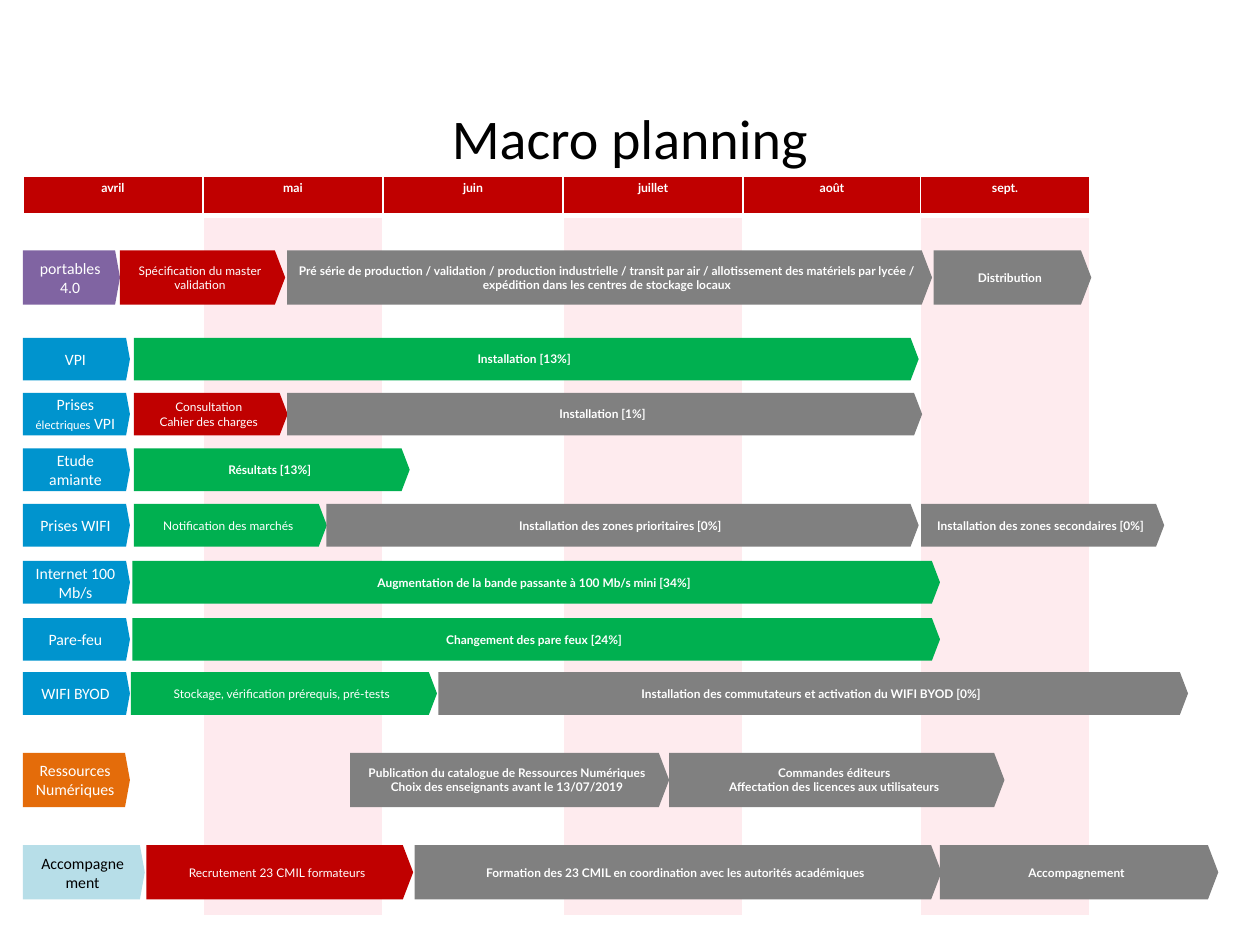
import pptx
import pptx.dml.color
import pptx.enum.shapes
import pptx.enum.text
import pptx.oxml
import pptx.oxml.ns
import pptx.util

Cm = pptx.util.Cm
Pt = pptx.util.Pt
RGB = pptx.dml.color.RGBColor
ALIGN = pptx.enum.text.PP_ALIGN
ANCHOR = pptx.enum.text.MSO_ANCHOR
PLATE = pptx.enum.shapes.MSO_SHAPE.PENTAGON

BLACK = RGB(0x00, 0x00, 0x00)
WHITE = RGB(0xFF, 0xFF, 0xFF)
RED = RGB(0xC0, 0x00, 0x00)
GREEN = RGB(0x00, 0xB0, 0x50)
GREY = RGB(0x80, 0x80, 0x80)
BLUE = RGB(0x00, 0x94, 0xCE)
VIOLET = RGB(0x80, 0x64, 0xA2)
ORANGE = RGB(0xE4, 0x6C, 0x0A)
PALE = RGB(0xB7, 0xDE, 0xE8)
ROSE = RGB(0xFE, 0xE2, 0xE7)
BLUSH = RGB(0xFE, 0xEB, 0xEE)

PREP = (RED, False)
START = (GREEN, False)
RUN = (GREEN, True)
NEXT = (GREY, True)

LEFT = 0.46
LOW = 0.86
HIGH = 1.09

MONTHS = [
    ("avril", 3.63, WHITE, 100),
    ("mai", 3.63, ROSE, 70),
    ("juin", 3.63, WHITE, 100),
    ("juillet", 3.63, BLUSH, 100),
    ("août", 3.58, WHITE, 70),
    ("sept.", 3.4, BLUSH, 100),
]

TRACKS = [
    (5.05, HIGH, "portables 4.0", 1.96, VIOLET, [
        (1.96, 3.33, "Spécification du master\nvalidation", PREP),
        (5.33, 13, "Pré série de production / validation / production industrielle / "
         "transit par air / allotissement des matériels par lycée / "
         "expédition dans les centres de stockage locaux", NEXT),
        (18.36, 3.18, "Distribution", NEXT)]),
    (6.81, LOW, "VPI", 2.16, BLUE, [
        (2.24, 15.82, "Installation [13%]", RUN)]),
    (7.92, LOW, "Prises |électriques| VPI", 2.16, BLUE, [
        (2.24, 3.1, "Consultation\nCahier des charges", PREP),
        (5.33, 12.8, "Installation [1%]", NEXT)]),
    (9.04, LOW, "Etude amiante", 2.16, BLUE, [
        (2.24, 5.56, "Résultats [13%]", RUN)]),
    (10.16, LOW, "Prises WIFI", 2.16, BLUE, [
        (2.24, 3.89, "Notification des marchés", START),
        (6.12, 11.94, "Installation des zones prioritaires [0%]", NEXT),
        (18.11, 4.9, "Installation des zones secondaires [0%]", NEXT)]),
    (11.31, LOW, "Internet 100 Mb/s", 2.16, BLUE, [
        (2.21, 16.28, "Augmentation de la bande passante à 100 Mb/s mini [34%]", RUN)]),
    (12.46, LOW, "Pare-feu", 2.16, BLUE, [
        (2.21, 16.28, "Changement des pare feux [24%]", RUN)]),
    (13.55, LOW, "WIFI BYOD", 2.16, BLUE, [
        (2.18, 6.17, "Stockage, vérification prérequis, pré-tests", START),
        (8.38, 15.11, "Installation des commutateurs et activation du WIFI BYOD [0%]", NEXT)]),
    (15.18, HIGH, "Ressources Numériques", 2.16, ORANGE, [
        (6.6, 6.43, "Publication du catalogue de Ressources Numériques\n"
         "Choix des enseignants avant le 13/07/2019", NEXT),
        (13.03, 6.76, "Commandes éditeurs\nAffectation des licences aux utilisateurs", NEXT)]),
    (17.04, HIGH, "Accompagnement", 2.46, PALE, [
        (2.49, 5.38, "Recrutement 23 CMIL formateurs", PREP),
        (7.9, 10.62, "Formation des 23 CMIL en coordination avec les autorités académiques", NEXT),
        (18.49, 5.61, "Accompagnement", NEXT)]),
]


def style(run, size, face, tone, bold=False):
    run.font.size = Pt(size)
    run.font.name = face
    run.font.color.rgb = tone
    run.font.bold = bold


def head(slide, left, top, width, height):
    title = slide.shapes.title
    title.left, title.top, title.width, title.height = map(Cm, (left, top, width, height))
    frame = title.text_frame
    frame.text = "Macro planning"
    frame.vertical_anchor = ANCHOR.TOP
    line = frame.paragraphs[0]
    line.alignment = ALIGN.CENTER
    style(line.runs[0], 32, "Calibri", BLACK)


def paint(cell, tone, edges, alpha=100):
    props = cell._tc.get_or_add_tcPr()
    for side, width in zip("LRTB", edges):
        props.append(pptx.oxml.parse_xml(
            f'<a:ln{side} {pptx.oxml.ns.nsdecls("a")} w="{Pt(width)}">'
            f'<a:solidFill><a:srgbClr val="{WHITE}"/></a:solidFill></a:ln{side}>'))
    cell.fill.solid()
    cell.fill.fore_color.rgb = tone
    if alpha < 100:
        color = props.find("a:solidFill/a:srgbClr", pptx.oxml.ns._nsmap)
        color.append(pptx.oxml.parse_xml(
            f'<a:alpha {pptx.oxml.ns.nsdecls("a")} val="{alpha * 1000}"/>'))


def grid(slide, left, top, width, height):
    band = 0.79
    table = slide.shapes.add_table(
        2, len(MONTHS), Cm(left), Cm(top), Cm(width), Cm(height)).table
    table.rows[0].height = Cm(band)
    table.rows[1].height = Cm(height - band)
    for col, (month, span, tone, alpha) in enumerate(MONTHS):
        table.columns[col].width = Cm(span)
        cell = table.cell(0, col)
        cell.margin_left = cell.margin_right = Cm(0.15)
        cell.margin_top = cell.margin_bottom = Cm(0.08)
        cell.text_frame.text = month
        line = cell.text_frame.paragraphs[0]
        line.alignment = ALIGN.CENTER
        style(line.runs[0], 7, "Lato", WHITE, True)
        paint(cell, RED, (1, 1, 1, 3))
        paint(table.cell(1, col), tone, (1, 1, 3, 1), alpha)


def plate(slide, left, top, width, height, tone, point):
    shape = slide.shapes.add_shape(PLATE, Cm(left), Cm(top), Cm(width), Cm(height))
    shape.adjustments[0] = point
    shape.shadow.inherit = False
    shape.fill.solid()
    shape.fill.fore_color.rgb = tone
    shape.line.fill.background()
    frame = shape.text_frame
    frame.word_wrap = True
    frame.vertical_anchor = ANCHOR.MIDDLE
    return frame


def label(slide, left, top, width, height, text, tone):
    frame = plate(slide, left, top, width, height, tone, 0.09)
    line = frame.paragraphs[0]
    line.alignment = ALIGN.CENTER
    ink = BLACK if tone == PALE else WHITE
    for place, piece in enumerate(text.split("|")):
        run = line.add_run()
        run.text = piece
        style(run, 7 if place % 2 else 9, "Calibri", ink)


def bar(slide, left, top, width, height, text, state):
    tone, bold = state
    frame = plate(slide, left, top, width, height, tone, 0.19)
    frame.margin_left = frame.margin_right = Cm(0.05)
    frame.margin_top = frame.margin_bottom = Cm(0.05)
    frame.text = text
    for line in frame.paragraphs:
        line.alignment = ALIGN.CENTER
        style(line.runs[0], 6.8, "Lato", WHITE, bold)


def track(slide, left, top, height, name, width, tone, bars):
    label(slide, left, top, width, height, name, tone)
    for start, span, text, state in bars:
        bar(slide, left + start, top, span, height, text, state)


def main():
    deck = pptx.Presentation()
    deck.slide_width, deck.slide_height = Cm(25.4), Cm(19.05)
    slide = deck.slides.add_slide(deck.slide_layouts[5])
    head(slide, 1.27, 1.96, 22.86, 2.21)
    grid(slide, LEFT, 3.56, sum(month[1] for month in MONTHS), 14.91)
    for top, height, name, width, tone, bars in TRACKS:
        track(slide, LEFT, top, height, name, width, tone, bars)
    deck.save("out.pptx")


if __name__ == "__main__":
    main()
